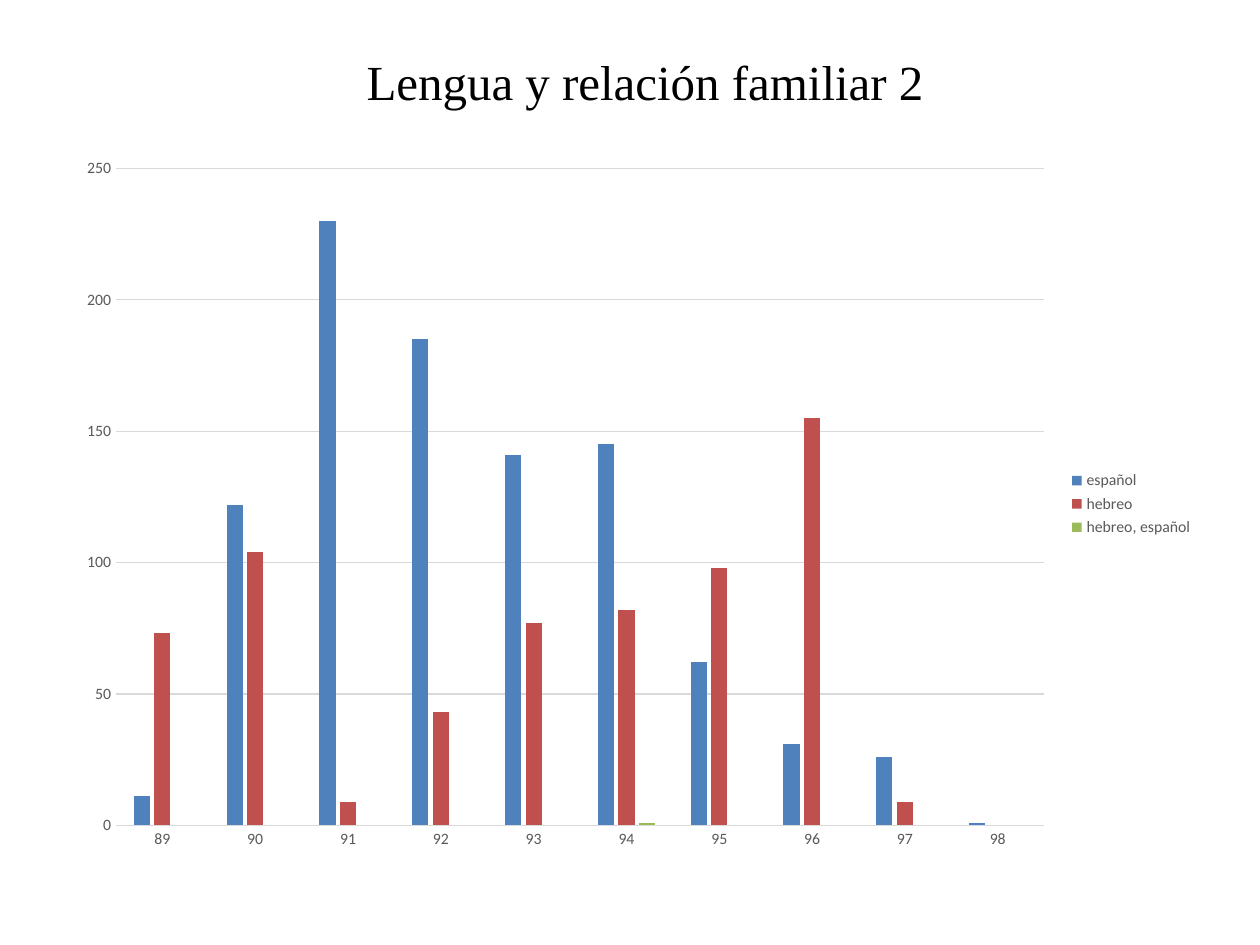
from pptx import Presentation
from pptx.chart.data import CategoryChartData
from pptx.dml.color import RGBColor
from pptx.enum.chart import XL_CHART_TYPE, XL_LEGEND_POSITION, XL_TICK_MARK
from pptx.enum.text import MSO_AUTO_SIZE, PP_ALIGN
from pptx.util import Pt

COLUMN = XL_CHART_TYPE.COLUMN_CLUSTERED
RIGHT = XL_LEGEND_POSITION.RIGHT
NONE = XL_TICK_MARK.NONE
CENTER = PP_ALIGN.CENTER
GROW = MSO_AUTO_SIZE.SHAPE_TO_FIT_TEXT

BLACK = RGBColor(0x00, 0x00, 0x00)
GRAY = RGBColor(0x59, 0x59, 0x59)
PALE = RGBColor(0xD9, 0xD9, 0xD9)
BLUE = RGBColor(0x4F, 0x81, 0xBD)
RED = RGBColor(0xC0, 0x50, 0x4D)
GREEN = RGBColor(0x9B, 0xBB, 0x59)


def style(item, values):
    for key, value in values.items():
        setattr(item, key, value)


def paint(font, face, size, color):
    style(font, {"name": face, "size": Pt(size), "bold": False})
    font.color.rgb = color


deck = Presentation()
style(deck, {"slide_width": Pt(720), "slide_height": Pt(540)})
slide = deck.slides.add_slide(deck.slide_layouts[6])

title = slide.shapes.add_textbox(Pt(59.76), Pt(25.92), Pt(617.76), Pt(41.04))
style(title.text_frame, {"word_wrap": True, "auto_size": GROW})
line = title.text_frame.paragraphs[0]
line.alignment = CENTER
run = line.add_run()
run.text = "Lengua y relación familiar 2"
paint(run.font, "Times New Roman", 28, BLACK)

series = [
    ("español", BLUE, [11, 122, 230, 185, 141, 145, 62, 31, 26, 1]),
    ("hebreo", RED, [73, 104, 9, 43, 77, 82, 98, 155, 9, None]),
    ("hebreo, español", GREEN, [None] * 5 + [1] + [None] * 4),
]
data = CategoryChartData()
data.categories = [str(year) for year in range(89, 99)]
for name, color, counts in series:
    data.add_series(name, counts)

frame = slide.shapes.add_chart(
    COLUMN, Pt(36.72), Pt(82.8), Pt(652.32), Pt(410.4), data
)
chart = frame.chart
style(chart, {"has_title": False, "has_legend": True})
paint(chart.font, "Calibri", 10, BLACK)
style(chart.legend, {"position": RIGHT, "include_in_layout": False})
paint(chart.legend.font, "Calibri", 9, GRAY)

years, scale = chart.category_axis, chart.value_axis
for axis in (years, scale):
    style(axis, {"major_tick_mark": NONE, "minor_tick_mark": NONE})
    paint(axis.tick_labels.font, "Calibri", 9, GRAY)
style(scale, {
    "minimum_scale": 0,
    "maximum_scale": 250,
    "major_unit": 50,
    "has_major_gridlines": True,
})
scale.format.line.fill.background()
for rule in (years.format.line, scale.major_gridlines.format.line):
    rule.color.rgb = PALE
    rule.width = Pt(0.75)

plot = chart.plots[0]
style(plot, {"gap_width": 219, "overlap": -27, "vary_by_categories": False})
for bars, (name, color, counts) in zip(plot.series, series):
    bars.invert_if_negative = False
    bars.format.fill.solid()
    bars.format.fill.fore_color.rgb = color

deck.save("out.pptx")
